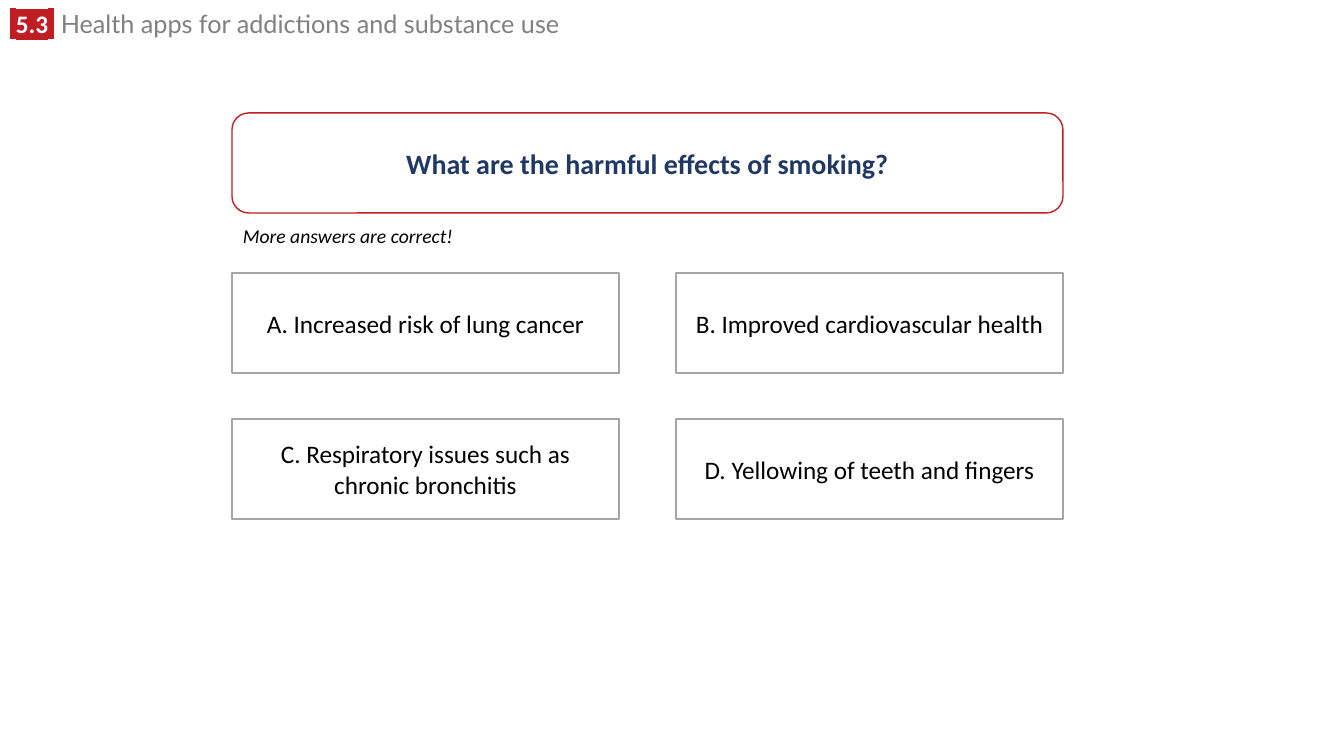
from dataclasses import dataclass

from lxml.etree import SubElement
from pptx import Presentation
from pptx.dml.color import RGBColor
from pptx.enum.shapes import MSO_SHAPE as Shape
from pptx.enum.text import MSO_ANCHOR as Anchor, MSO_AUTO_SIZE as AutoSize, PP_ALIGN as Align
from pptx.oxml.ns import qn
from pptx.util import Emu, Pt

EMU_PER_PX = 914400 / 100.8


@dataclass(frozen=True)
class Theme:
    red: str = "C01E24"
    navy: str = "203864"
    gray: str = "808080"
    border: str = "A5A5A5"
    black: str = "000000"
    white: str = "FFFFFF"
    body_font: str = "Calibri"
    header_font: str = "Lato"
    question_size: int = 20
    text_size: int = 18
    hint_size: int = 14
    line_width: int = 1


THEME = Theme()


def px(length):
    return Emu(round(length * EMU_PER_PX))


def add_run(paragraph, text, size, color, font_name=THEME.body_font,
            bold=False, italic=False, highlight=None):
    run = paragraph.add_run()
    run.text = text
    font = run.font
    font.size, font.bold, font.italic = Pt(size), bold, italic
    font.color.rgb = RGBColor.from_string(color)
    if highlight:
        # The highlight has to stand between the fill and the typeface.
        marker = SubElement(font._element, qn("a:highlight"))
        SubElement(marker, qn("a:srgbClr"), val=highlight)
    font.name = font_name


def add_text_box(slide, box, wrap):
    frame = slide.shapes.add_textbox(*map(px, box)).text_frame
    frame.word_wrap = wrap
    frame.auto_size = AutoSize.SHAPE_TO_FIT_TEXT
    return frame.paragraphs[0]


def add_card(slide, box, kind, line_color, text, size, color, bold=False):
    """Add a white outlined shape with centred text."""
    shape = slide.shapes.add_shape(kind, *map(px, box))
    shape.shadow.inherit = False
    shape.fill.solid()
    shape.fill.fore_color.rgb = RGBColor.from_string(THEME.white)
    shape.line.color.rgb = RGBColor.from_string(line_color)
    shape.line.width = Pt(THEME.line_width)
    frame = shape.text_frame
    frame.word_wrap = True
    frame.vertical_anchor = Anchor.MIDDLE
    paragraph = frame.paragraphs[0]
    paragraph.alignment = Align.CENTER
    add_run(paragraph, text, size, color, bold=bold)


def add_header(slide, box, number, title):
    paragraph = add_text_box(slide, box, wrap=True)
    paragraph.line_spacing = 0.8
    for text, font_name in ((" ", THEME.header_font),
                            (number, THEME.body_font),
                            (" ", THEME.header_font)):
        add_run(paragraph, text, THEME.text_size, THEME.white, font_name,
                bold=True, highlight=THEME.red)
    add_run(paragraph, " " + title, THEME.text_size, THEME.gray, THEME.header_font)


def add_question(slide, box, text):
    add_card(slide, box, Shape.ROUNDED_RECTANGLE, THEME.red, text,
             THEME.question_size, THEME.navy, bold=True)


def add_hint(slide, box, text):
    paragraph = add_text_box(slide, box, wrap=False)
    add_run(paragraph, text, THEME.hint_size, THEME.black, italic=True)


def add_answers(slide, box, answers, columns=2, column_gap=57, row_gap=46):
    """Lay the answers out row by row in an even grid that fills the box."""
    left, top, width, height = box
    rows = -(-len(answers) // columns)
    card_width = (width - (columns - 1) * column_gap) // columns
    card_height = (height - (rows - 1) * row_gap) // rows
    for index, answer in enumerate(answers):
        row, column = divmod(index, columns)
        card_box = (left + column * (card_width + column_gap),
                    top + row * (card_height + row_gap), card_width, card_height)
        add_card(slide, card_box, Shape.RECTANGLE, THEME.border,
                 f"{'ABCD'[index]}. {answer}", THEME.text_size, THEME.black)


def add_quiz(slide, box, question, hint, answers):
    left, top, width, height = box
    add_question(slide, (left, top, width, 100), question)
    add_hint(slide, (left + 1, top + 106, 236, 34), hint)
    add_answers(slide, (left, top + 160, width, height - 160), answers)


def main():
    presentation = Presentation()
    presentation.slide_width, presentation.slide_height = px(1344), px(756)
    slide = presentation.slides.add_slide(presentation.slide_layouts[6])
    add_header(slide, (0, 9, 960, 35), "5.3",
               "Health apps for addictions and substance use")
    add_quiz(slide, (232, 113, 831, 406),
             "What are the harmful effects of smoking?",
             "More answers are correct!",
             ["Increased risk of lung cancer",
              "Improved cardiovascular health",
              "Respiratory issues such as chronic bronchitis",
              "Yellowing of teeth and fingers"])
    presentation.save("out.pptx")


if __name__ == "__main__":
    main()
